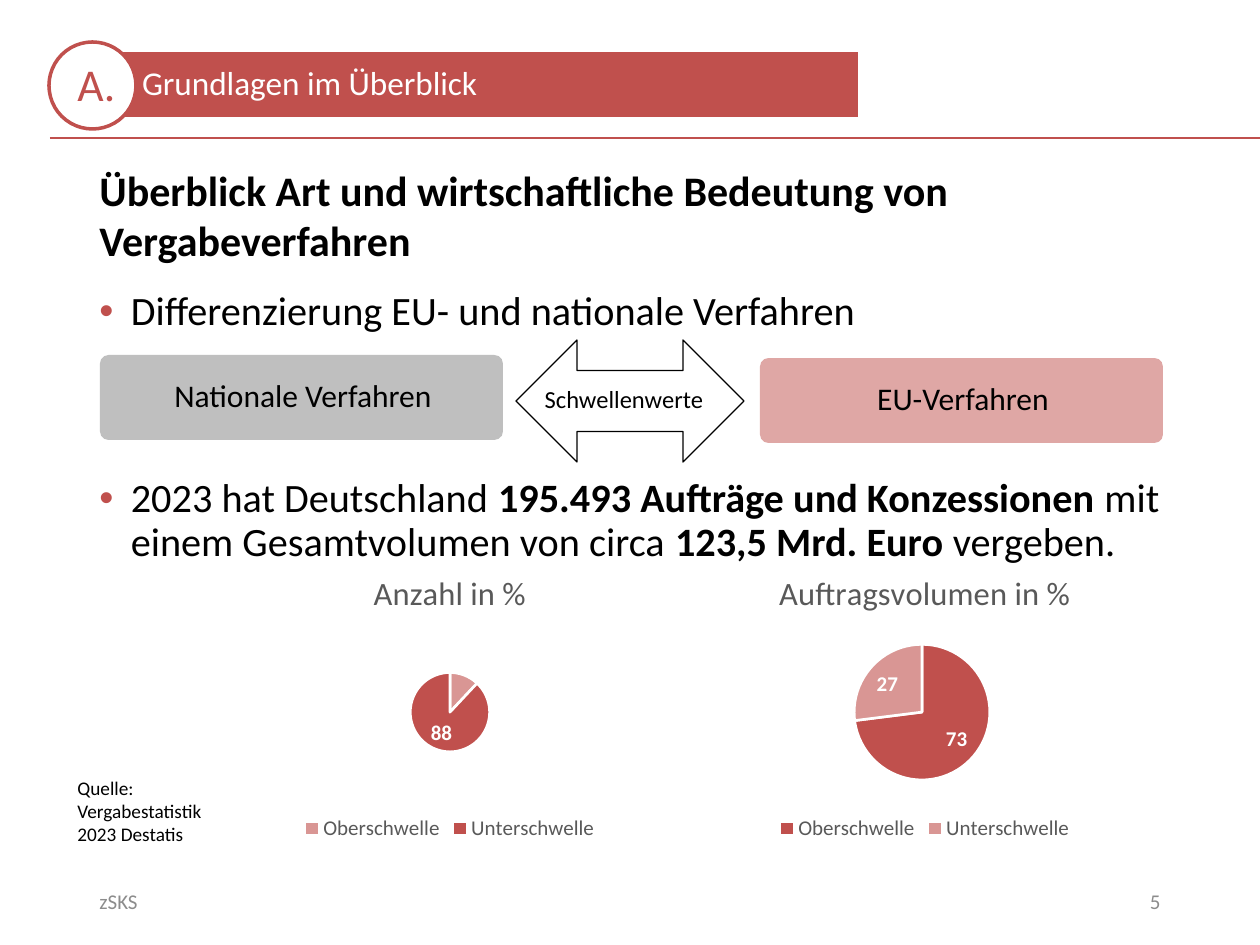
import lxml.etree
import pptx
import pptx.chart.data
import pptx.dml.color
import pptx.enum.chart
import pptx.enum.shapes
import pptx.enum.text
import pptx.oxml
import pptx.oxml.ns
import pptx.util

SCALE = 914400 / 126
COLORS = {"red": "C0504D", "white": "FFFFFF", "black": "000000",
          "gray": "BFBFBF", "footer": "8C8C8C", "chart": "595959"}
ALIGN = pptx.enum.text.PP_ALIGN
ANCHOR = pptx.enum.text.MSO_ANCHOR
SHAPES = pptx.enum.shapes.MSO_SHAPE
LABELS = pptx.enum.chart.XL_LABEL_POSITION
qn = pptx.oxml.ns.qn


def px(*lengths):
    return [pptx.util.Emu(round(length * SCALE)) for length in lengths]


def paint(target, color, opacity=100):
    """Fill, line or font color; opacity in percent applies to fills."""
    if hasattr(target, "solid"):
        target.solid()
        target = target.fore_color
    elif hasattr(target, "color"):
        target = target.color
    target.rgb = pptx.dml.color.RGBColor.from_string(COLORS[color])
    if opacity < 100:
        fill = shape.fill if target_is_shape else point.format.fill
        element = fill._xPr.find(qn("a:solidFill"))[0]
        lxml.etree.SubElement(element, qn("a:alpha")).set("val", str(opacity * 1000))


presentation = pptx.Presentation()
presentation.slide_width, presentation.slide_height = px(1260, 945)
slide = presentation.slides.add_slide(presentation.slide_layouts[6])

connector = slide.shapes.add_connector(
    pptx.enum.shapes.MSO_CONNECTOR.STRAIGHT, *px(50, 138, 1260, 138))
paint(connector.line, "red")
connector.line.width = pptx.util.Pt(1)
lxml.etree.SubElement(connector._element.spPr, qn("a:effectLst"))

# kind, box, fill, opacity, line, line width, text, size, font color, alignment, insets
target_is_shape = True
shape_rows = [
    (SHAPES.RECTANGLE, (87, 50, 773, 69), "red", 100, "white", 2,
     "Grundlagen im Überblick", 19, "white", ALIGN.LEFT, (55, 6)),
    (SHAPES.OVAL, (49, 42, 87, 87), "white", 100, "red", 2, "", 0, "red", ALIGN.LEFT, (0, 0)),
    (SHAPES.LEFT_RIGHT_ARROW, (516, 340, 228, 122), None, 100, "black", 0.75,
     "Schwellenwerte", 14, "black", ALIGN.CENTER, (0, 12)),
    (SHAPES.ROUNDED_RECTANGLE, (100, 355, 403, 85), "gray", 100, None, 0,
     "Nationale Verfahren", 18, "black", ALIGN.CENTER, (7, 4)),
    (SHAPES.ROUNDED_RECTANGLE, (760, 358, 403, 85), "red", 50, None, 0,
     "EU-Verfahren", 18, "black", ALIGN.CENTER, (7, 4)),
]
for kind, box, fill, opacity, line, width, text, size, color, alignment, insets in shape_rows:
    shape = slide.shapes.add_shape(kind, *px(*box))
    shape.shadow.inherit = False
    if fill:
        paint(shape.fill, fill, opacity)
    else:
        shape.fill.background()
    if line:
        paint(shape.line, line)
        shape.line.width = pptx.util.Pt(width)
    else:
        shape.line.fill.background()
    if kind == SHAPES.ROUNDED_RECTANGLE:
        shape.adjustments[0] = 0.1
    if text:
        frame = shape.text_frame
        left, right = px(*insets)
        frame_format = {"margin_left": left, "margin_right": right, "margin_top": 0,
                        "margin_bottom": 0, "vertical_anchor": ANCHOR.MIDDLE,
                        "word_wrap": kind != SHAPES.LEFT_RIGHT_ARROW}
        for name, value in frame_format.items():
            setattr(frame, name, value)
        paragraph = frame.paragraphs[0]
        paragraph.text = text
        paragraph.alignment = alignment
        paragraph.line_spacing = 0.9
        paragraph.font.name = "Calibri"
        paragraph.font.size = pptx.util.Pt(size)
        paint(paragraph.font, color)

# box, paragraphs of (text, bold) runs, size, color, anchor, alignment, bulleted
text_rows = [
    ((65, 50, 90, 68), [[("A.", False)]], 26, "red", ANCHOR.TOP, ALIGN.LEFT, False),
    ((87, 158, 1076, 115),
     [[("Überblick Art und wirtschaftliche Bedeutung von Vergabeverfahren", True)]],
     24, "black", ANCHOR.TOP, ALIGN.LEFT, False),
    ((87, 285, 1086, 580),
     [[("Differenzierung EU- und nationale Verfahren", False)],
      [("2023 hat Deutschland ", False), ("195.493 Aufträge und Konzessionen ", True),
       ("mit einem Gesamtvolumen von circa ", False), ("123,5 Mrd. Euro ", True),
       ("vergeben.", False)]],
     23, "black", ANCHOR.TOP, ALIGN.LEFT, True),
    ((65, 770, 153, 83), [[("Quelle: Vergabestatistik 2023 Destatis", False)]],
     11, "black", ANCHOR.TOP, ALIGN.LEFT, False),
    ((87, 876, 284, 50), [[("zSKS", False)]], 12, "footer", ANCHOR.MIDDLE, ALIGN.LEFT, False),
    ((889, 876, 284, 50), [[("5", False)]], 12, "footer", ANCHOR.MIDDLE, ALIGN.RIGHT, False),
]
for box, paragraphs, size, color, anchor, alignment, bulleted in text_rows:
    frame = slide.shapes.add_textbox(*px(*box)).text_frame
    frame.word_wrap = True
    frame.vertical_anchor = anchor
    for index, runs in enumerate(paragraphs):
        paragraph = frame.add_paragraph() if index else frame.paragraphs[0]
        paragraph.alignment = alignment
        if index:
            paragraph.space_before = pptx.util.Pt(82)
        if bulleted:
            paragraph.line_spacing = 0.9
            properties = paragraph._p.get_or_add_pPr()
            properties.set("marL", "228600")
            properties.set("indent", "-228600")
            bullet_color = lxml.etree.SubElement(properties, qn("a:buClr"))
            lxml.etree.SubElement(bullet_color, qn("a:srgbClr")).set("val", COLORS["red"])
            lxml.etree.SubElement(properties, qn("a:buFont")).set("typeface", "Arial")
            lxml.etree.SubElement(properties, qn("a:buChar")).set("char", "•")
        for text, bold in runs:
            run = paragraph.add_run()
            run.text = text
            font_format = {"name": "Calibri", "size": pptx.util.Pt(size), "bold": bold}
            for name, value in font_format.items():
                setattr(run.font, name, value)
            paint(run.font, color)

# title, left, values, opacities, label position, plot area as shares of the chart
target_is_shape = False
chart_rows = [
    ("Anzahl in %", 155, (12, 88), (60, 100), LABELS.BEST_FIT, (0.43, 0.41, 0.14, 0.27)),
    ("Auftragsvolumen in %", 630, (73, 27), (100, 60), LABELS.INSIDE_END,
     (0.38, 0.31, 0.23, 0.47)),
]
for title, left, values, opacities, position, layout in chart_rows:
    data = pptx.chart.data.CategoryChartData()
    data.categories = ["Oberschwelle", "Unterschwelle"]
    data.add_series(title, values)
    chart = slide.shapes.add_chart(
        pptx.enum.chart.XL_CHART_TYPE.PIE, *px(left, 552, 590, 294), data).chart
    chart.font.name = "Calibri"
    chart.font.size = pptx.util.Pt(10)
    chart.has_title = True
    chart.chart_title.include_in_layout = False
    chart.chart_title.text_frame.text = title
    title_font = chart.chart_title.text_frame.paragraphs[0].runs[0].font
    chart.has_legend = True
    chart.legend.position = pptx.enum.chart.XL_LEGEND_POSITION.BOTTOM
    chart.legend.include_in_layout = False
    plot = chart.plots[0]
    plot.vary_by_categories = True
    plot.has_data_labels = True
    labels = plot.data_labels
    labels.show_value = True
    labels.show_percentage = False
    labels.position = position
    for font, size, color, bold in [(title_font, 18.6, "chart", False),
                                    (chart.legend.font, 12, "chart", False),
                                    (labels.font, 12, "white", True)]:
        font_format = {"name": "Calibri", "size": pptx.util.Pt(size), "bold": bold}
        for name, value in font_format.items():
            setattr(font, name, value)
        paint(font, color)
    for index, opacity in enumerate(opacities):
        point = plot.series[0].points[index]
        paint(point.format.fill, "red", opacity)
        paint(point.format.line, "white")
        point.format.line.width = pptx.util.Pt(1.5)

    plot_area = chart._chartSpace.chart.plotArea
    for old_layout in plot_area.findall(qn("c:layout")):
        plot_area.remove(old_layout)
    layout_element = pptx.oxml.parse_xml(
        f'<c:layout {pptx.oxml.ns.nsdecls("c")}><c:manualLayout/></c:layout>')
    plot_area.insert(0, layout_element)
    settings = [("layoutTarget", "inner"), ("xMode", "edge"), ("yMode", "edge"),
                *zip("xywh", layout)]
    for name, value in settings:
        lxml.etree.SubElement(layout_element[0], qn(f"c:{name}")).set("val", str(value))
    chart._chartSpace.chart.addnext(pptx.oxml.parse_xml(
        f'<c:spPr {pptx.oxml.ns.nsdecls("c", "a")}><a:noFill/><a:ln><a:noFill/></a:ln></c:spPr>'))

presentation.save("out.pptx")
